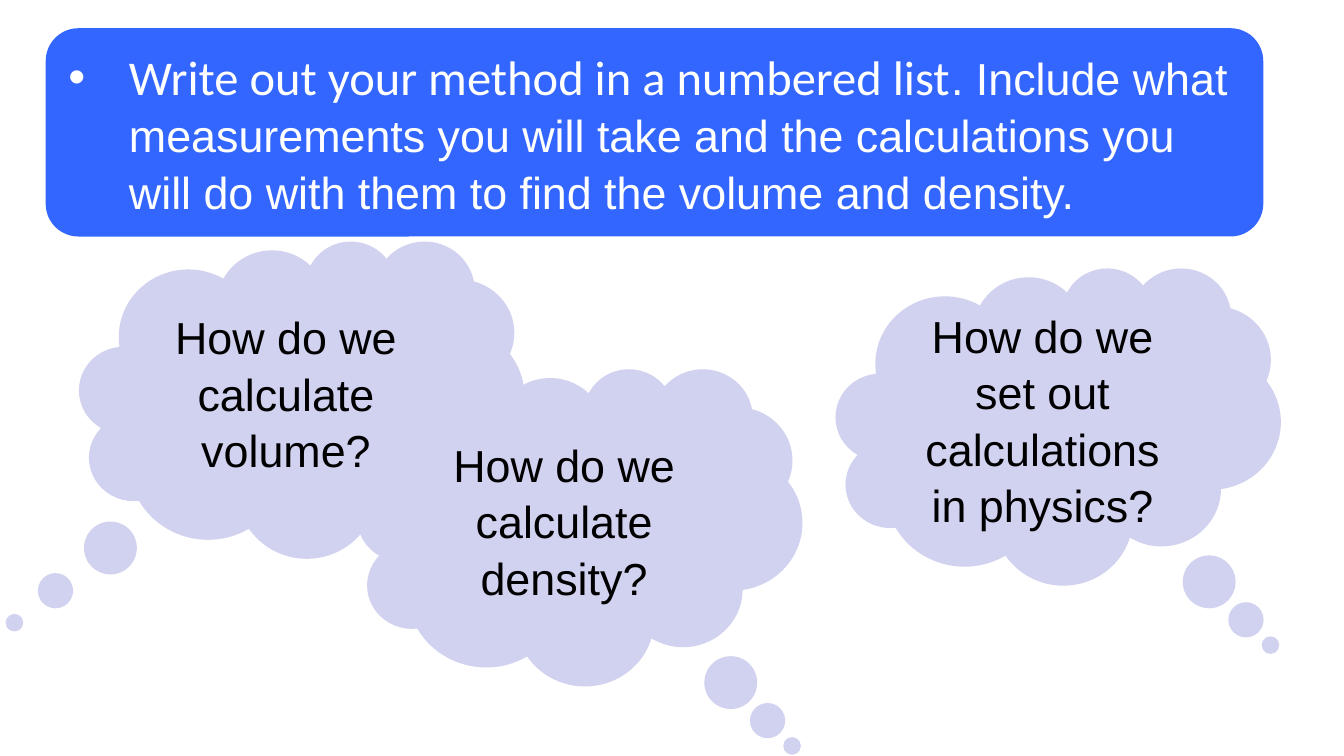
from lxml import etree
from pptx import Presentation
from pptx.dml.color import RGBColor
from pptx.enum.shapes import MSO_SHAPE
from pptx.enum.text import MSO_ANCHOR, PP_ALIGN
from pptx.oxml.ns import qn
from pptx.util import Pt

CLOUD, ROUNDED = MSO_SHAPE.CLOUD_CALLOUT, MSO_SHAPE.ROUNDED_RECTANGLE
TOP, MIDDLE = MSO_ANCHOR.TOP, MSO_ANCHOR.MIDDLE
LEFT, CENTER = PP_ALIGN.LEFT, PP_ALIGN.CENTER
BLUE = RGBColor(0x33, 0x66, 0xFF)
LILAC = RGBColor(0xD1, 0xD1, 0xF0)
WHITE = RGBColor(0xFF, 0xFF, 0xFF)
BLACK = RGBColor(0, 0, 0)
CLOUD_W, CLOUD_H = 238.3, 169.9
INDENT = Pt(32.4)

prs = Presentation()
prs.slide_width, prs.slide_height = Pt(720), Pt(405)
s = prs.slides.add_slide(prs.slide_layouts[6])


def add_panel(text, kind=CLOUD, box=(0, 0, 0, 0), adj=(), fill=LILAC,
              color=BLACK, font="Arial", size=24, align=CENTER, anchor=MIDDLE):
    sp = s.shapes.add_shape(kind, *[Pt(v) for v in box])
    for i, value in enumerate(adj):
        sp.adjustments[i] = value
    sp.shadow.inherit = False
    sp.fill.solid()
    sp.fill.fore_color.rgb = fill
    sp.line.fill.background()
    tf = sp.text_frame
    tf.word_wrap = True
    tf.vertical_anchor = anchor
    p = tf.paragraphs[0]
    p.alignment = align
    p.line_spacing = 1.05
    add_run(p, text, font=font, size=size, color=color)
    return p


def add_run(p, text, font="Arial", size=24, color=BLACK):
    r = p.add_run()
    r.text = text
    r.font.name = font
    r.font.size = Pt(size)
    r.font.color.rgb = color


for topic, x, y, tail in [
    ("calculate volume?", 42.5, 128.9, (-0.646, 0.705)),
    ("calculate density?", 191.5, 197.3, (0.477, 0.691)),
]:
    add_panel("How do we " + topic, box=(x, y, CLOUD_W, CLOUD_H), adj=tail)

p = add_panel("Write out your method in a numbered list", kind=ROUNDED,
              box=(24.5, 15.1, 652.3, 111.6), adj=(0.157,), fill=BLUE,
              color=WHITE, font="Calibri", size=26, align=LEFT, anchor=TOP)
add_run(p, ". Include what measurements you will take and the calculations "
        "you will do with them to find the volume and density.", color=WHITE)
pPr = p._p.get_or_add_pPr()
pPr.set("marL", str(INDENT))
pPr.set("indent", str(-INDENT))
etree.SubElement(pPr, qn("a:buFont"), typeface="Arial")
etree.SubElement(pPr, qn("a:buChar"), char="•")

add_panel("How do we set out calculations in physics?",
          box=(447.8, 143.3, CLOUD_W, CLOUD_H), adj=(0.477, 0.691))

prs.save("out.pptx")
